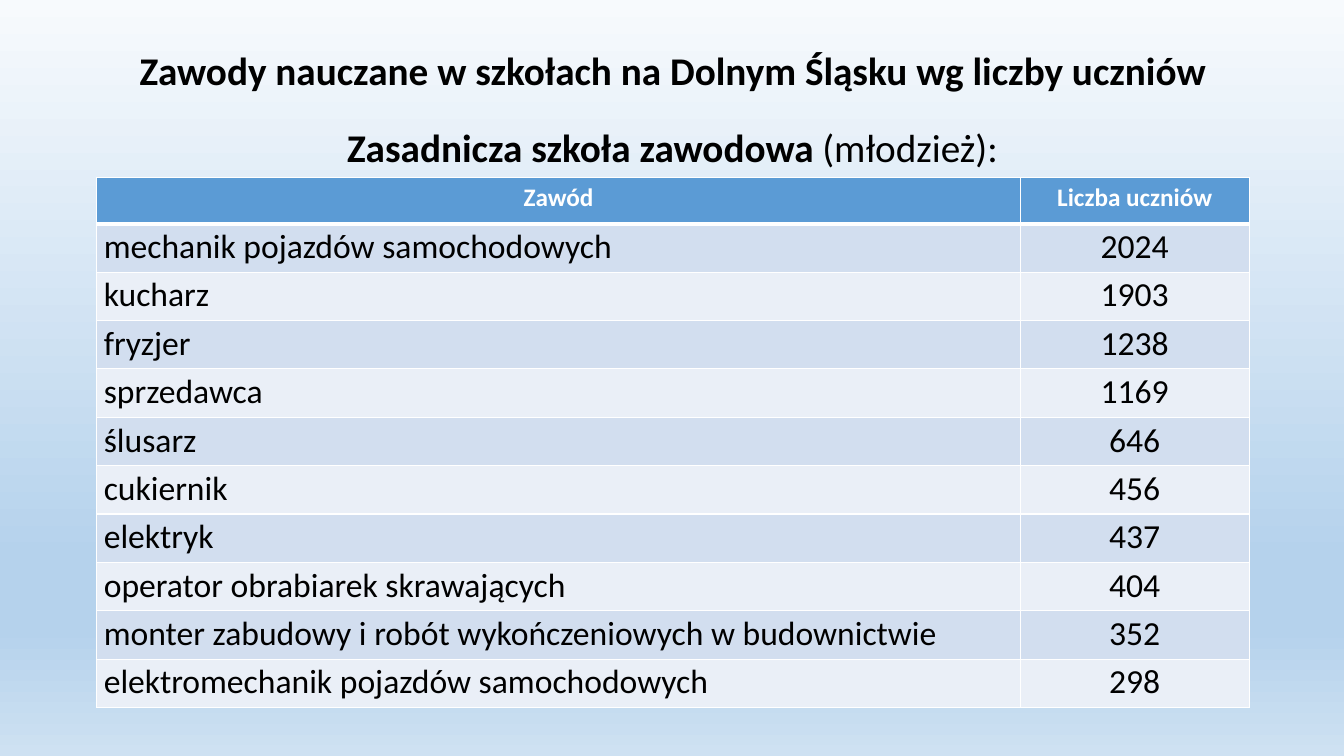
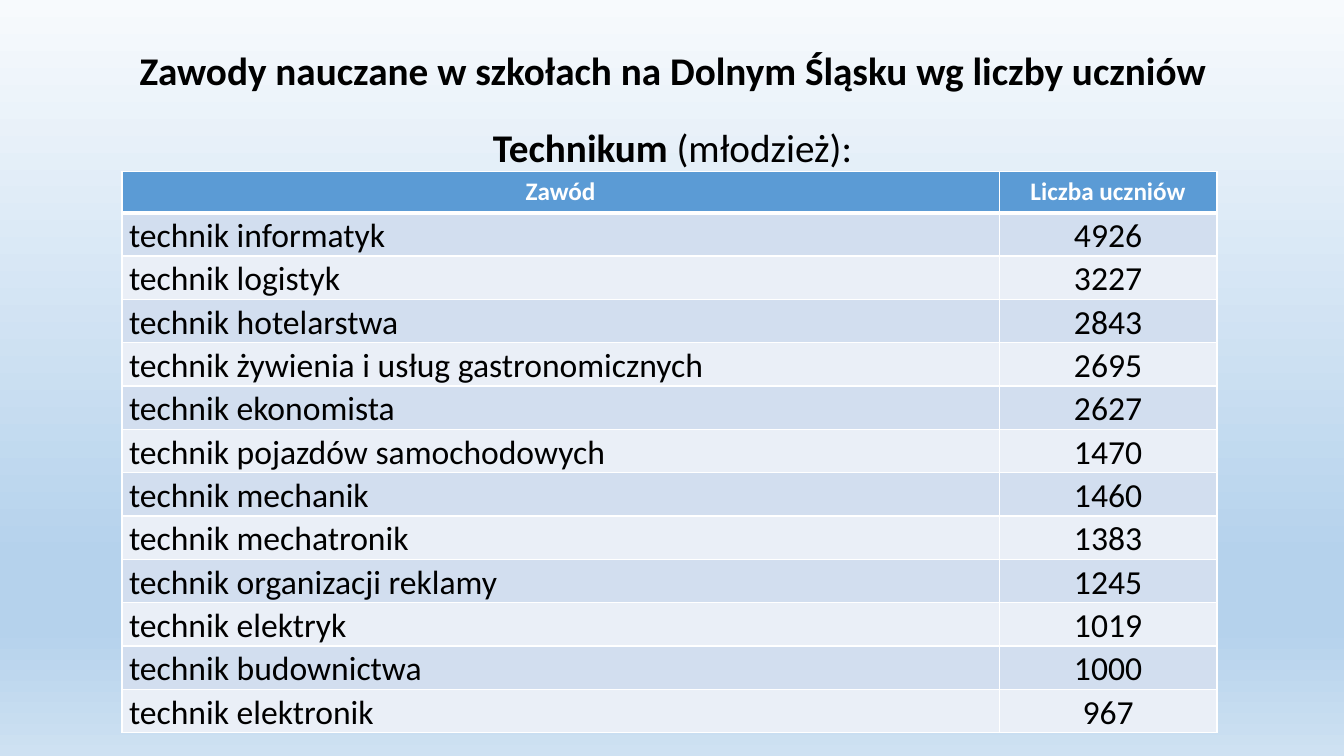
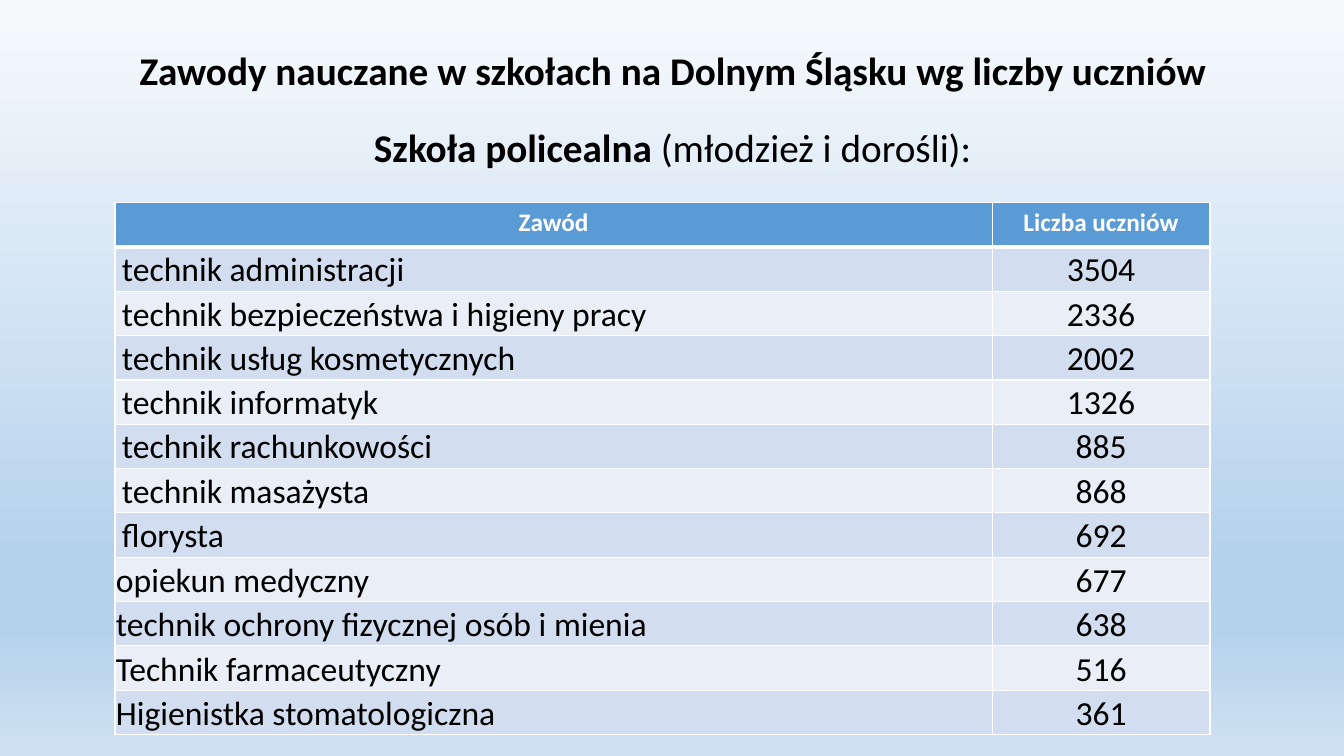
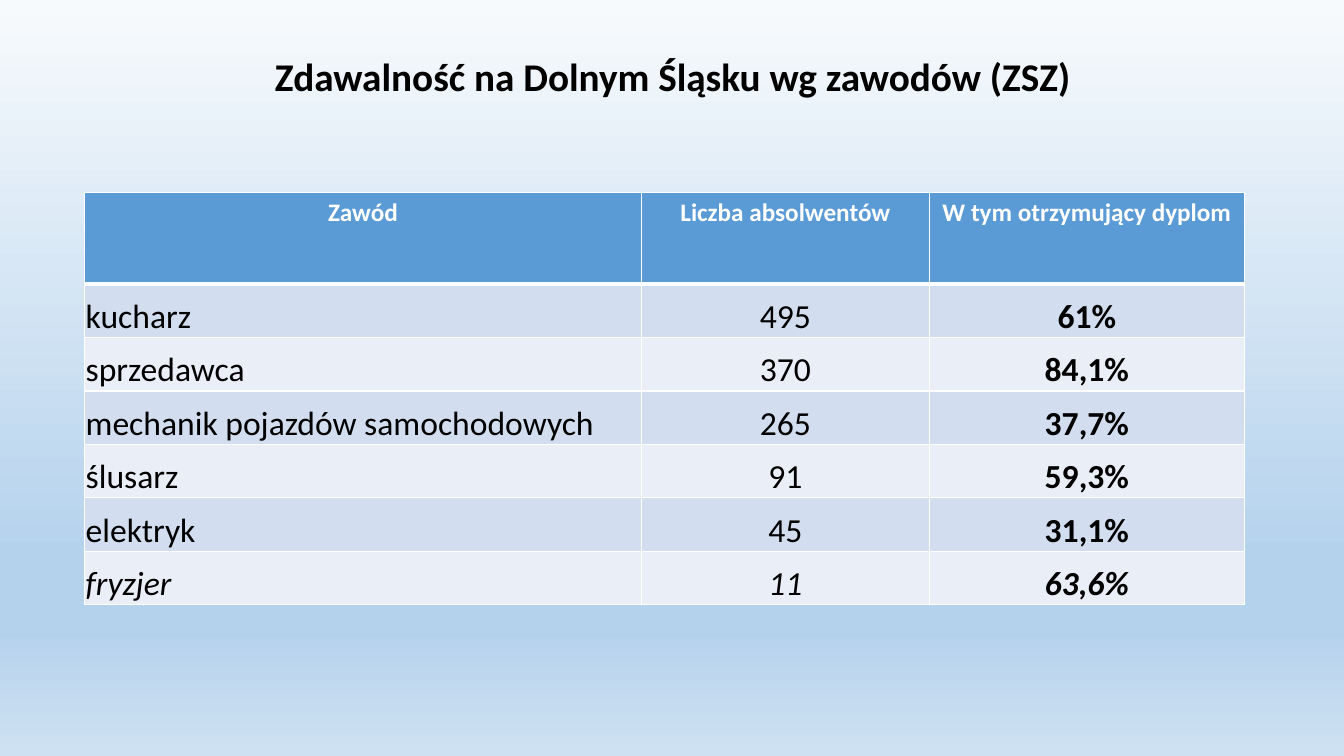
import pptx
import pptx.util
import pptx.dml.color
import pptx.enum.text
import pptx.oxml
import pptx.oxml.ns

PX = 9144  # 100 px to the inch
FONT = "Calibri"
BLACK, WHITE, HEAD = "000000", "FFFFFF", "5B9BD5"
BANDS = ("D2DEEF", "EAEFF7")
STOPS = ((0, "F7FAFD"), (74, "B5D2EC"), (83, "B5D2EC"), (100, "CEE1F2"))
ALIGN = pptx.enum.text.PP_ALIGN
ANCHOR = pptx.enum.text.MSO_ANCHOR

TOPIC = "Zawody nauczane w szkołach na Dolnym Śląsku wg liczby uczniów"
COUNT = ("Zawód", "Liczba uczniów")

BASIC = (
    ("mechanik pojazdów samochodowych", "2024"),
    ("kucharz", "1903"),
    ("fryzjer", "1238"),
    ("sprzedawca", "1169"),
    ("ślusarz", "646"),
    ("cukiernik", "456"),
    ("elektryk", "437"),
    ("operator obrabiarek skrawających", "404"),
    ("monter zabudowy i robót wykończeniowych w budownictwie", "352"),
    ("elektromechanik pojazdów samochodowych", "298"),
)
TECH = (
    ("technik informatyk", "4926"),
    ("technik logistyk", "3227"),
    ("technik hotelarstwa", "2843"),
    ("technik żywienia i usług gastronomicznych", "2695"),
    ("technik ekonomista", "2627"),
    ("technik pojazdów samochodowych", "1470"),
    ("technik mechanik", "1460"),
    ("technik mechatronik", "1383"),
    ("technik organizacji reklamy", "1245"),
    ("technik elektryk", "1019"),
    ("technik budownictwa", "1000"),
    ("technik elektronik", "967"),
)
POST = (
    ("technik administracji", "3504"),
    ("technik bezpieczeństwa i higieny pracy", "2336"),
    ("technik usług kosmetycznych", "2002"),
    ("technik informatyk", "1326"),
    ("technik rachunkowości", "885"),
    ("technik masażysta", "868"),
    ("florysta", "692"),
    ("opiekun medyczny", "677"),
    ("technik ochrony fizycznej osób i mienia", "638"),
    ("Technik farmaceutyczny", "516"),
    ("Higienistka stomatologiczna", "361"),
)
PASSED = (
    ("kucharz", "495", "61%"),
    ("sprzedawca", "370", "84,1%"),
    ("mechanik pojazdów samochodowych", "265", "37,7%"),
    ("ślusarz", "91", "59,3%"),
    ("elektryk", "45", "31,1%"),
    ("fryzjer", "11", "63,6%"),
)


def rgb(code):
    return pptx.dml.color.RGBColor.from_string(code)


class Deck:
    def __init__(self):
        self.prs = pptx.Presentation()
        self.prs.slide_width = 1333 * PX
        self.prs.slide_height = 750 * PX
        self.slide = None
        self.backdrop()

    def backdrop(self):
        """Gradient on the master, shared by every slide."""
        master = self.prs.slide_master
        fill = master.background.fill
        fill.gradient()
        fill.gradient_angle = 270
        stops = master.element.find(".//" + pptx.oxml.ns.qn("a:gsLst"))
        for old in list(stops):
            stops.remove(old)
        for place, code in STOPS:
            stops.append(pptx.oxml.parse_xml(
                f'<a:gs {pptx.oxml.ns.nsdecls("a")} pos="{place * 1000}">'
                f'<a:srgbClr val="{code}"/></a:gs>'))

    def page(self):
        self.slide = self.prs.slides.add_slide(self.prs.slide_layouts[6])

    def run(self, par, text, size, color=BLACK, bold=False, italic=False):
        font = par.add_run()
        font.text = text
        font = font.font
        font.name, font.size = FONT, pptx.util.Pt(size)
        font.bold, font.italic = bold, italic
        font.color.rgb = rgb(color)

    def line(self, top, height, runs, anchor, before=0):
        """One centred line of heading text; runs are (text, bold)."""
        box = self.slide.shapes.add_textbox(
            92 * PX, top * PX, 1150 * PX, height * PX)
        frame = box.text_frame
        frame.word_wrap = True
        frame.vertical_anchor = anchor
        par = frame.paragraphs[0]
        par.alignment = ALIGN.CENTER
        par.line_spacing = 0.9
        par.space_before = pptx.util.Pt(before)
        for text, bold in runs:
            self.run(par, text, 28, bold=bold)

    def title(self, text, height=64):
        self.line(40, height, [(text, True)], ANCHOR.MIDDLE)

    def lead(self, name, note):
        self.line(123, 60, [(name, True), (note, False)], ANCHOR.TOP, 10)

    def edges(self, cell, row):
        """White grid, with a thick rule under the header."""
        thick = {(0, "B"), (1, "T")}
        for side in "LRTB":
            width = pptx.util.Pt(3 if (row, side) in thick else 1)
            cell._tc.get_or_add_tcPr().append(pptx.oxml.parse_xml(
                f'<a:ln{side} {pptx.oxml.ns.nsdecls("a")} w="{width}">'
                f'<a:solidFill><a:srgbClr val="{WHITE}"/></a:solidFill>'
                f'</a:ln{side}>'))

    def inset(self, cell, *sizes):
        (cell.margin_left, cell.margin_top,
         cell.margin_right, cell.margin_bottom) = [n * PX for n in sizes]

    def table(self, left, top, cols, high, step, head, rows,
              tight=None, strong=None, slant=None):
        """Body rows from index tight on sit low with thin margins;
        strong is a bold column and slant an italic body row."""
        tight = len(rows) if tight is None else tight
        grid = self.slide.shapes.add_table(
            len(rows) + 1, len(cols), left * PX, top * PX,
            sum(cols) * PX, (high + step * len(rows)) * PX).table
        for col, width in zip(grid.columns, cols):
            col.width = width * PX
        for r, texts in enumerate((head, *rows)):
            grid.rows[r].height = (step if r else high) * PX
            for c, text in enumerate(texts):
                cell = grid.cell(r, c)
                self.edges(cell, r)
                cell.fill.solid()
                cell.fill.fore_color.rgb = rgb(BANDS[(r - 1) % 2] if r else HEAD)
                par = cell.text_frame.paragraphs[0]
                par.alignment = ALIGN.LEFT if r and c == 0 else ALIGN.CENTER
                if r == 0:
                    self.run(par, text, 18, WHITE, bold=True)
                    continue
                if r > tight:
                    self.inset(cell, 1, 1, 1, 0)
                    cell.vertical_anchor = ANCHOR.BOTTOM
                else:
                    self.inset(cell, 7, 0, 7, 0)
                    par.line_spacing = 1.07
                self.run(par, text, 24, bold=c == strong, italic=r - 1 == slant)


def main():
    deck = Deck()

    # Taught trades, one slide per school type
    schools = (
        ("Zasadnicza szkoła zawodowa ", "(młodzież):",
         (96, 176, (916, 227), 46, 48, COUNT, BASIC), None),
        ("Technikum", " (młodzież):",
         (121, 170, (870, 216), 41, 43, COUNT, TECH), None),
        ("Szkoła policealna ", "(młodzież i dorośli):",
         (114, 201, (870, 216), 44, 44, COUNT, POST), 7),
    )
    for name, note, grid, tight in schools:
        deck.page()
        deck.title(TOPIC)
        deck.lead(name, note)
        deck.table(*grid, tight=tight)

    # Pass rates
    deck.page()
    deck.title("Zdawalność na Dolnym Śląsku wg zawodów (ZSZ)", 77)
    deck.table(84, 191, (552, 286, 312), 91, 53,
               ("Zawód", "Liczba absolwentów", "W tym otrzymujący dyplom"),
               PASSED, tight=0, strong=2, slant=5)

    deck.prs.save("out.pptx")


if __name__ == "__main__":
    main()
